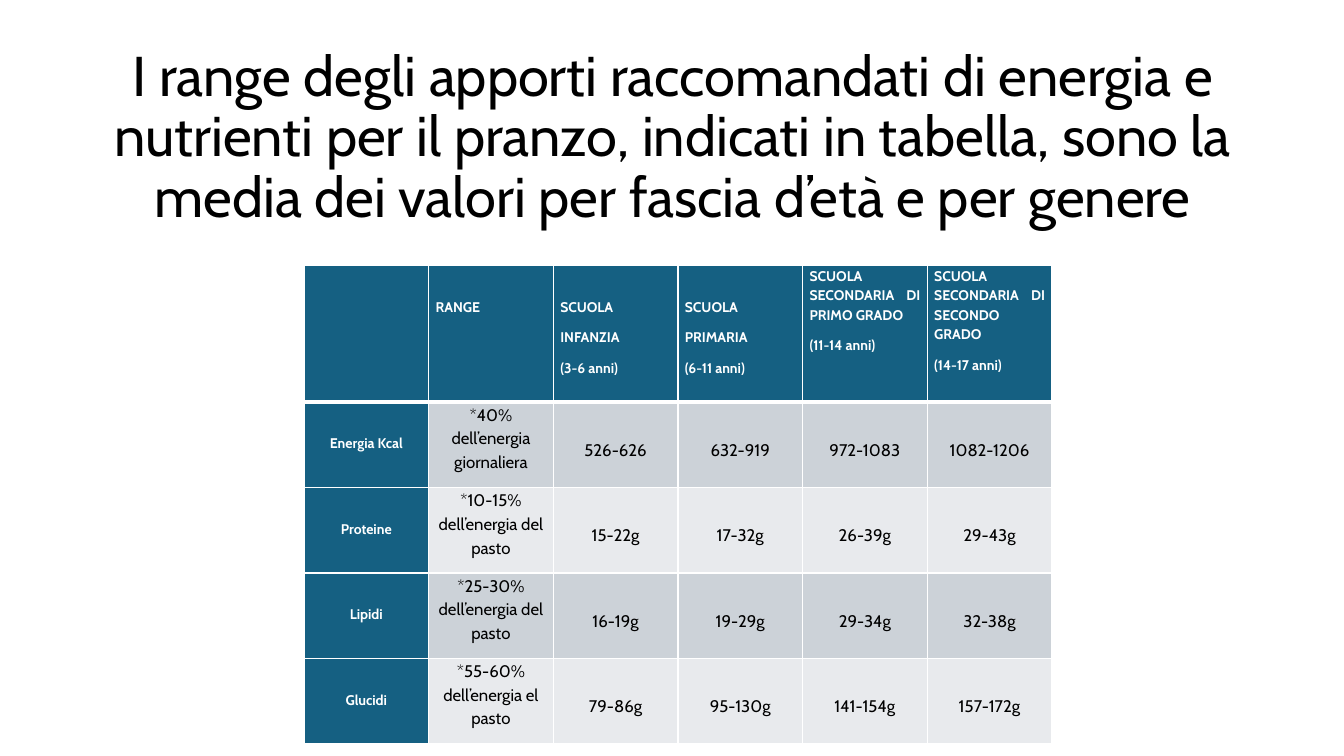
"""Build a slide with a table of recommended energy and nutrient ranges for school lunches."""
from lxml.etree import SubElement
from pptx import Presentation
from pptx.dml.color import RGBColor
from pptx.enum.text import MSO_ANCHOR, PP_ALIGN
from pptx.oxml.ns import qn
from pptx.util import Pt

COLORS = {"black": "000000", "white": "FFFFFF", "blue": "156082", "dark_band": "CCD2D8", "light_band": "E8EAED"}
FONT = "Cabin"
HEADERS = [
    [],
    ["RANGE"],
    ["SCUOLA", "INFANZIA", "(3-6 anni)"],
    ["SCUOLA", "PRIMARIA", "(6-11 anni)"],
    ["SCUOLA SECONDARIA DI PRIMO GRADO", "(11-14 anni)"],
    ["SCUOLA SECONDARIA DI SECONDO GRADO", "(14-17 anni)"],
]
NUTRIENTS = [
    ["Energia Kcal", "*40% dell’energia giornaliera", "526-626", "632-919", "972-1083", "1082-1206"],
    ["Proteine", "*10-15% dell’energia del pasto", "15-22g", "17-32g", "26-39g", "29-43g"],
    ["Lipidi", "*25-30% dell’energia del pasto", "16-19g", "19-29g", "29-34g", "32-38g"],
    ["Glucidi", "*55-60% dell’energia el pasto", "79-86g", "95-130g", "141-154g", "157-172g"],
]


def px(length):
    return round(length * 914400 / 100.8)


def style_paragraph(paragraph, size, color, bold, align, line_spacing):
    paragraph.alignment = align
    paragraph.line_spacing = line_spacing
    paragraph.font.name = FONT
    paragraph.font.size = Pt(size)
    paragraph.font.bold = bold
    paragraph.font.color.rgb = RGBColor.from_string(COLORS[color])


presentation = Presentation()
presentation.slide_width, presentation.slide_height = px(1344), px(756)
slide = presentation.slides.add_slide(presentation.slide_layouts[6])

title = slide.shapes.add_textbox(px(93), px(40), px(1159), px(197)).text_frame
title.word_wrap = True
title.vertical_anchor = MSO_ANCHOR.MIDDLE
title.text = (
    "I range degli apporti raccomandati di energia e nutrienti per il pranzo, "
    "indicati in tabella, sono la media dei valori per fascia d’età e per genere"
)
style_paragraph(title.paragraphs[0], 40, "black", False, PP_ALIGN.CENTER, 0.9)

rows = [HEADERS] + [[[text] for text in nutrient] for nutrient in NUTRIENTS]
table_width, table_height, header_height = px(748), px(479), px(137)
table = slide.shapes.add_table(len(rows), len(HEADERS), px(304), px(265), table_width, table_height).table
for column in table.columns:
    column.width = table_width // len(HEADERS)
for row in table.rows:
    row.height = (table_height - header_height) // len(NUTRIENTS)
table.rows[0].height = header_height

for row_index, row in enumerate(rows):
    for column_index, lines in enumerate(row):
        cell = table.cell(row_index, column_index)
        is_header = row_index == 0
        is_heading = is_header or column_index == 0
        starts_at_top = column_index >= 4 if is_header else column_index == 1
        cell.margin_left = cell.margin_right = px(7)
        cell.margin_top = px(0 if starts_at_top else 31 if is_heading else 35)
        cell.margin_bottom = 0
        cell.vertical_anchor = MSO_ANCHOR.TOP

        cell_properties = cell._tc.get_or_add_tcPr()
        for side in "LRTB":
            is_header_rule = (row_index, side) in [(0, "B"), (1, "T")]
            border = SubElement(cell_properties, qn(f"a:ln{side}"), w=str(Pt(3 if is_header_rule else 1)))
            border_fill = SubElement(border, qn("a:solidFill"))
            SubElement(border_fill, qn("a:srgbClr"), val=COLORS["white"])
        band = "dark_band" if row_index % 2 else "light_band"
        cell.fill.solid()
        cell.fill.fore_color.rgb = RGBColor.from_string(COLORS["blue" if is_heading else band])

        cell.text = "\n".join(lines)
        size, color = (10, "white") if is_heading else (12, "black")
        align = PP_ALIGN.JUSTIFY if is_header else PP_ALIGN.CENTER
        for paragraph in cell.text_frame.paragraphs:
            style_paragraph(paragraph, size, color, is_heading, align, 1.15)
            paragraph.space_after = Pt(8)

presentation.save("out.pptx")
